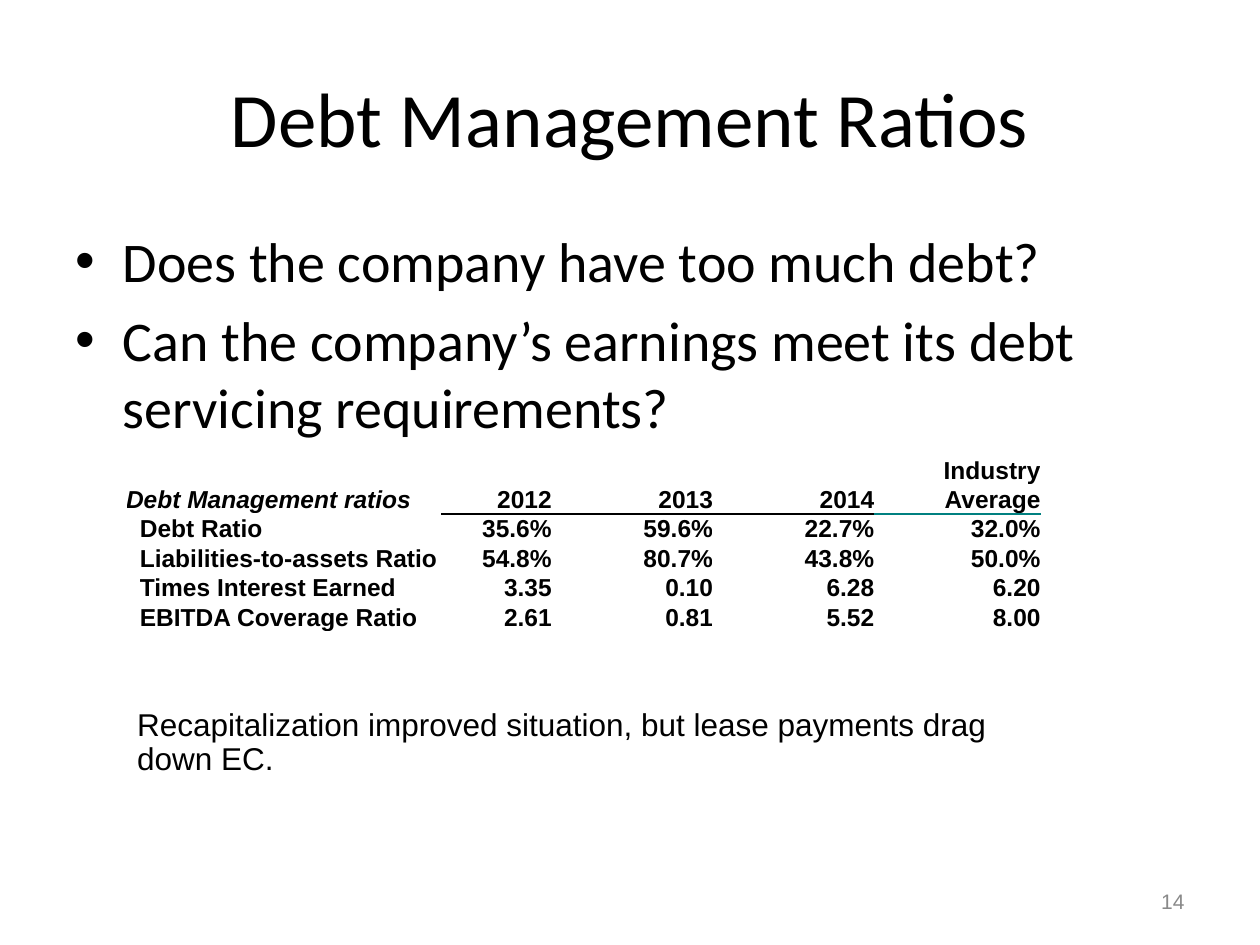
from dataclasses import dataclass
from lxml import etree
from pptx import Presentation, util as u
from pptx.dml.color import RGBColor
from pptx.enum import text as t
from pptx.oxml import ns


@dataclass(frozen=True)
class Theme:
    ink: str = "000000"
    teal: str = "008080"
    gray: str = "898989"
    head: str = "Calibri"
    sans: str = "Arial"
    title: int = 44
    list: int = 32
    note: int = 18
    cell: int = 14
    page: int = 12


T = Theme()
RIGHT = t.PP_ALIGN.RIGHT
MID = t.MSO_ANCHOR.MIDDLE
COLS = (1.09, 1.42, 0.87, 1.28, 1.28, 1.32)
ROWS = (
    ("", "", "", "", "Industry"),
    ("Debt Management ratios", "2012", "2013", "2014", "Average"),
    ("Debt Ratio", "35.6%", "59.6%", "22.7%", "32.0%"),
    ("Liabilities-to-assets Ratio", "54.8%", "80.7%", "43.8%", "50.0%"),
    ("Times Interest Earned", "3.35", "0.10", "6.28", "6.20"),
    ("EBITDA Coverage Ratio", "2.61", "0.81", "5.52", "8.00"),
)


def put(obj, **vals):
    for key, val in vals.items():
        setattr(obj, key, val)


def place(shape, *box):
    for key, val in zip(("left", "top", "width", "height"), box):
        setattr(shape, key, u.Inches(val))


def write(para, words, size, face, ink=T.ink, **form):
    run = para.add_run()
    run.text = words
    put(run.font, size=u.Pt(size), name=face, **form)
    run.font.color.rgb = RGBColor.from_string(ink)


def title(slide, words):
    shape = slide.shapes.title
    place(shape, 0.5, 0.3, 9, 1.25)
    shape.text_frame.vertical_anchor = MID
    para = shape.text_frame.paragraphs[0]
    para.alignment = t.PP_ALIGN.CENTER
    write(para, words, T.title, T.head)


def points(slide, lines):
    shape = slide.placeholders[1]
    place(shape, 0.5, 1.75, 9, 4.95)
    frame = shape.text_frame
    for i, line in enumerate(lines):
        para = frame.add_paragraph() if i else frame.paragraphs[0]
        write(para, line, T.list, T.head)


def label(slide, box, words, size, ink=T.ink, anchor=t.MSO_ANCHOR.TOP, **form):
    shape = slide.shapes.add_textbox(*map(u.Inches, box))
    put(shape.text_frame, word_wrap=True, vertical_anchor=anchor)
    para = shape.text_frame.paragraphs[0]
    put(para, **form)
    write(para, words, size, T.sans, ink)


def rule(cell, side, ink):
    line = etree.Element(ns.qn("a:" + side), w=str(u.Pt(1)))
    fill = etree.SubElement(line, ns.qn("a:solidFill"))
    etree.SubElement(fill, ns.qn("a:srgbClr"), val=ink)
    cell._tc.get_or_add_tcPr().insert(0, line)


def fill(cell, words, **form):
    put(cell, margin_left=0, margin_right=0, margin_top=0, margin_bottom=0,
        vertical_anchor=t.MSO_ANCHOR.BOTTOM)
    cell.fill.background()
    para = cell.text_frame.paragraphs[0]
    if words:
        write(para, words, T.cell, T.sans, bold=True, **form)
    else:
        etree.SubElement(para._p, ns.qn("a:endParaRPr"), sz=str(T.cell * 100))
    return para


def ratios(slide):
    frame = slide.shapes.add_table(len(ROWS), len(COLS), u.Inches(1),
                                   u.Inches(3.61), u.Inches(sum(COLS)), u.Inches(1.1))
    grid = frame.table
    put(grid, first_row=False, horz_banding=False)
    for col, wide in zip(grid.columns, COLS):
        col.width = u.Inches(wide)
    for r, (name, *vals) in enumerate(ROWS):
        grid.rows[r].height = u.Inches(0.18)
        lead = grid.cell(r, 0)
        fill(lead, name, italic=r == 1)
        fill(grid.cell(r, 1), "")
        if r:
            lead.merge(grid.cell(r, 1))
        if r > 1:
            lead.margin_left = u.Inches(0.11)
        for c, val in enumerate(vals, 2):
            cell = grid.cell(r, c)
            fill(cell, val).alignment = RIGHT
            if r in (1, 2):
                rule(cell, "lnB" if r == 1 else "lnT", T.teal if c == 5 else T.ink)


def main():
    deck = Presentation()
    put(deck, slide_width=u.Inches(10), slide_height=u.Inches(7.5))
    slide = deck.slides.add_slide(deck.slide_layouts[1])
    title(slide, "Debt Management Ratios")
    points(slide, ("Does the company have too much debt?",
                   "Can the company’s earnings meet its debt servicing requirements?"))
    label(slide, (7.17, 6.95, 2.33, 0.4), "14", T.page, T.gray, MID, alignment=RIGHT)
    ratios(slide)
    label(slide, (0.99, 5.58, 7.17, 0.65),
          "Recapitalization improved situation, but lease payments drag down EC.",
          T.note, line_spacing=0.9)
    deck.save("out.pptx")


if __name__ == "__main__":
    main()
